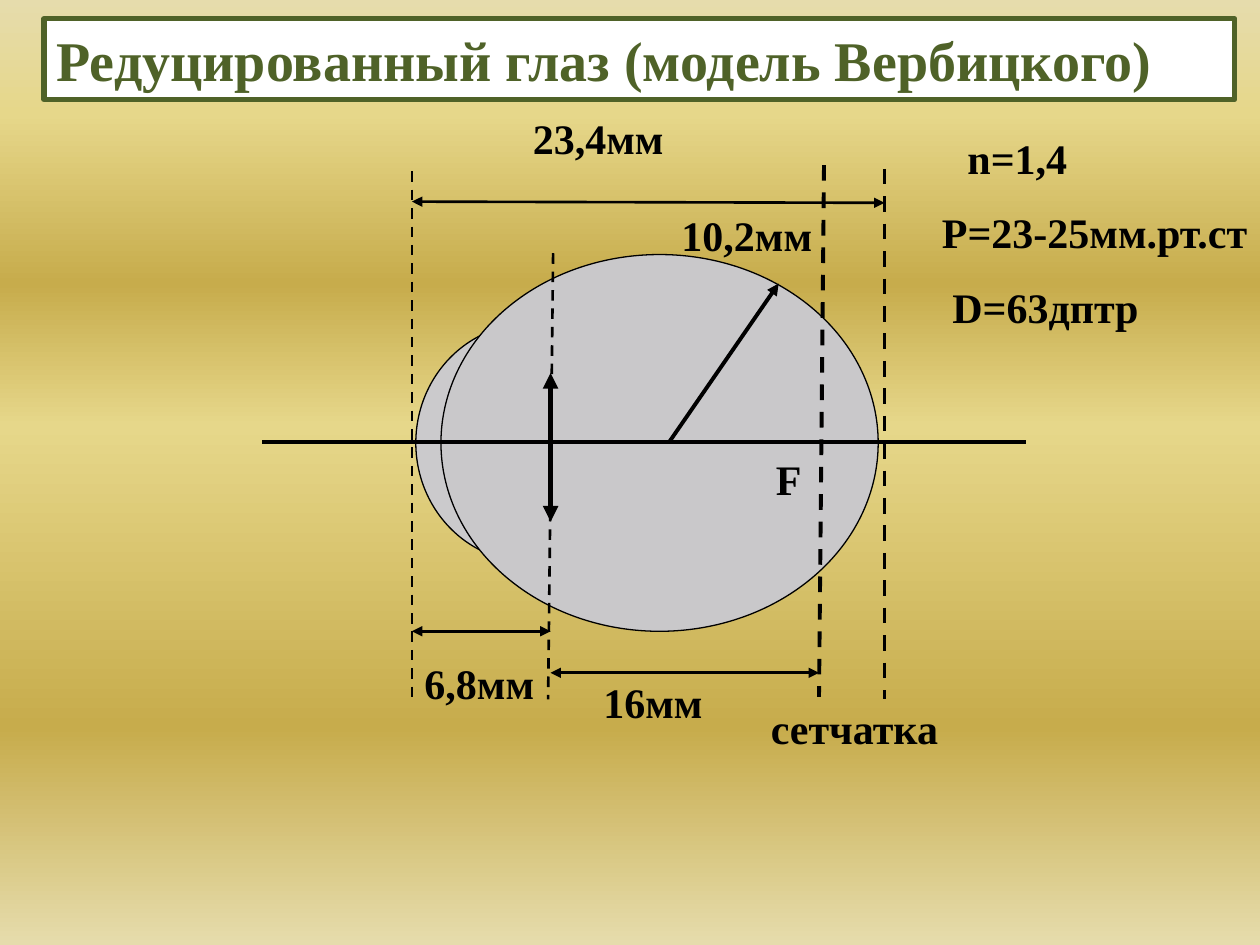
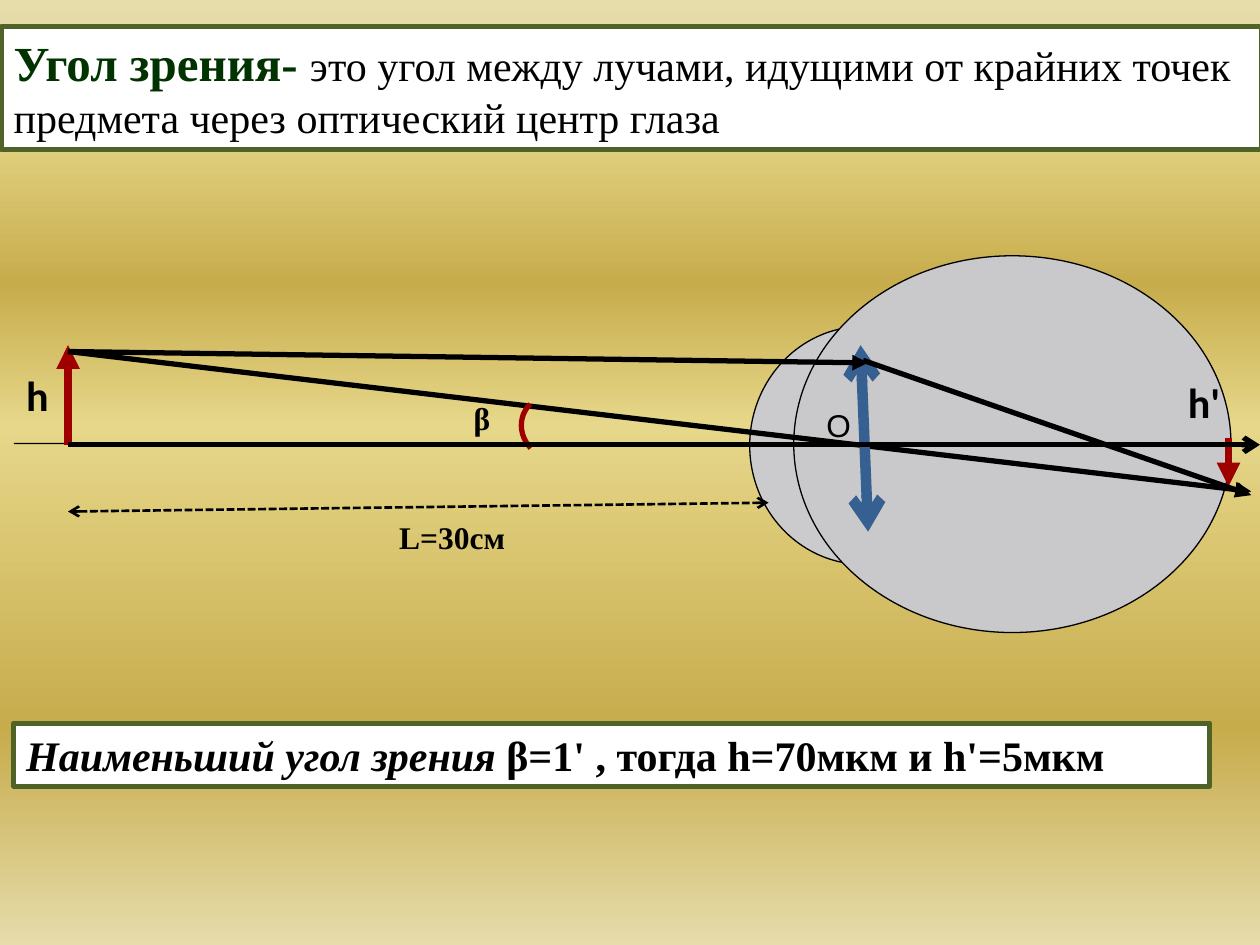
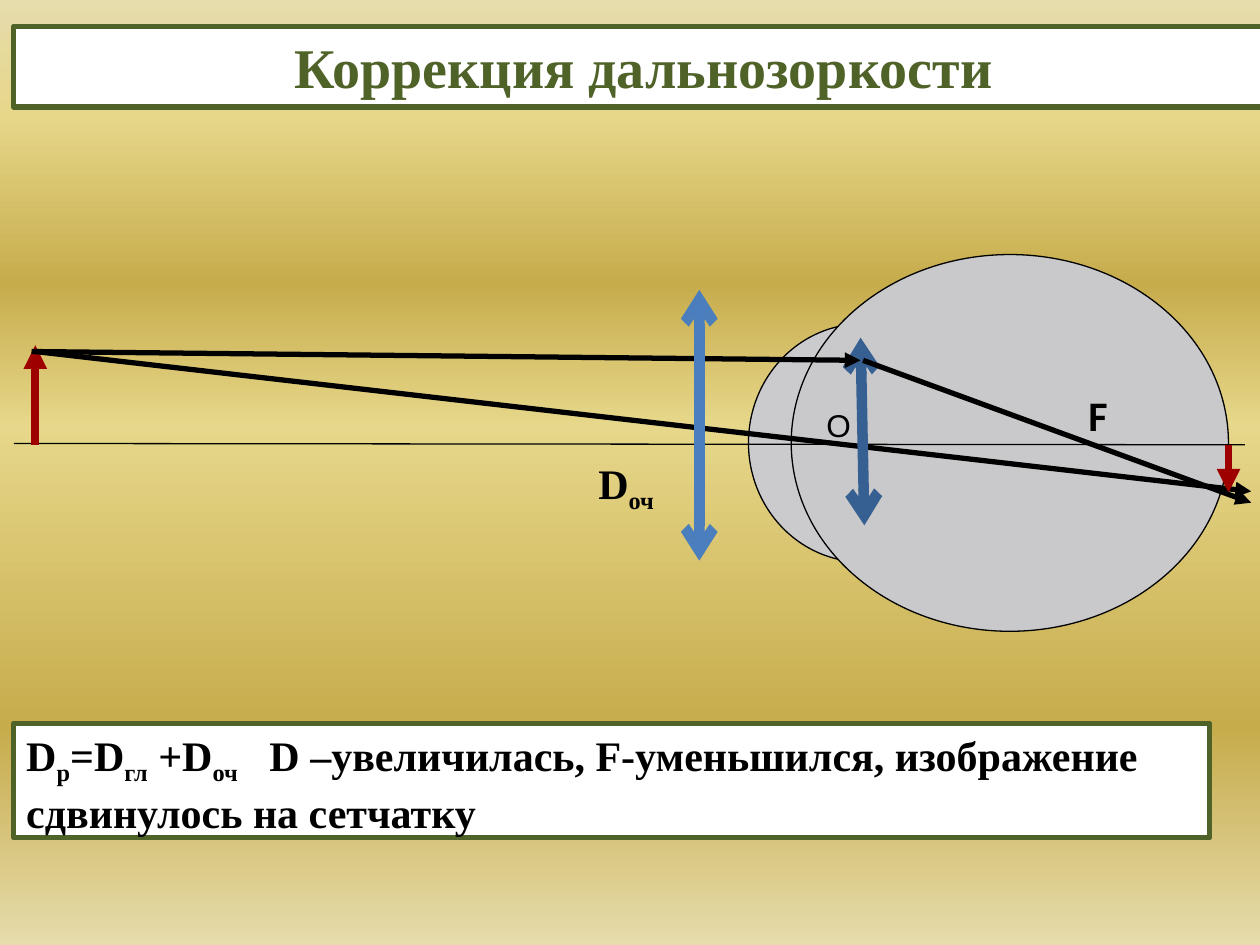
from itertools import cycle

from lxml.etree import SubElement
from pptx import Presentation
from pptx.dml.color import RGBColor
from pptx.enum.dml import MSO_LINE
from pptx.enum.shapes import MSO_CONNECTOR, MSO_SHAPE
from pptx.enum.text import MSO_ANCHOR, MSO_AUTO_SIZE, PP_ALIGN
from pptx.oxml import parse_xml
from pptx.oxml.ns import nsdecls, qn
from pptx.util import Inches, Pt

SLIDE_WIDTH, SLIDE_HEIGHT = Inches(10), Inches(7.5)
COLUMN, ROW = SLIDE_WIDTH / 100, SLIDE_HEIGHT / 75

BLACK = RGBColor(0x00, 0x00, 0x00)
WHITE = RGBColor(0xFF, 0xFF, 0xFF)
OLIVE = RGBColor(0x4F, 0x62, 0x28)
DARK_GREEN = RGBColor(0x00, 0x33, 0x00)
CORNEA_GREY = RGBColor(0xCB, 0xCA, 0xCC)
EYEBALL_GREY = RGBColor(0xC9, 0xC8, 0xCA)
DARK_RED = RGBColor(0x9E, 0x00, 0x00)
LENS_BLUE = RGBColor(0x37, 0x60, 0x92)
GLASSES_BLUE = RGBColor(0x4B, 0x7E, 0xBC)
PALE_GOLD = RGBColor(0xE6, 0xDC, 0xAC)
LIGHT_GOLD = RGBColor(0xE6, 0xD7, 0x8A)
DEEP_GOLD = RGBColor(0xC7, 0xAC, 0x4C)
BACKGROUND_STOPS = [(0, PALE_GOLD), (12, LIGHT_GOLD), (30, DEEP_GOLD),
                    (45, LIGHT_GOLD), (77, DEEP_GOLD), (100, PALE_GOLD)]

SERIF, SANS, LETTER = "Times New Roman", "Arial", "Calibri"


def grid_box(left, top, width, height):
    return (round(left * COLUMN), round(top * ROW),
            round(width * COLUMN), round(height * ROW))


def add_gold_slide(deck):
    slide = deck.slides.add_slide(deck.slide_layouts[6])
    stops = "".join(f'<a:gs pos="{share * 1000}"><a:srgbClr val="{color}"/></a:gs>'
                    for share, color in BACKGROUND_STOPS)
    background = parse_xml(
        f'<p:bg {nsdecls("p", "a")}><p:bgPr><a:gradFill rotWithShape="1">'
        f'<a:gsLst>{stops}</a:gsLst><a:lin ang="5400000" scaled="0"/>'
        '</a:gradFill><a:effectLst/></p:bgPr></p:bg>')
    slide.element.cSld.insert(0, background)
    return slide


def add_outlined(slide, kind, box, fill, color, weight):
    outlined = slide.shapes.add_shape(kind, *grid_box(*box))
    outlined.shadow.inherit = False
    if fill is None:
        outlined.fill.background()
    else:
        outlined.fill.solid()
        outlined.fill.fore_color.rgb = fill
    outlined.line.color.rgb = color
    outlined.line.width = Pt(weight)
    return outlined


def add_stroke(slide, start, end, weight, color=BLACK, head=None, tail=None, dash=None):
    (x1, y1), (x2, y2) = start, end
    stroke = slide.shapes.add_connector(
        MSO_CONNECTOR.STRAIGHT, round(x1 * COLUMN), round(y1 * ROW),
        round(x2 * COLUMN), round(y2 * ROW))
    stroke.line.color.rgb = color
    stroke.line.width = Pt(weight)
    if dash is not None:
        stroke.line.dash_style = dash
    outline = stroke.line._get_or_add_ln()
    for end_tag, arrowhead in (("a:headEnd", head), ("a:tailEnd", tail)):
        if arrowhead:
            SubElement(outline, qn(end_tag), type=arrowhead)
    SubElement(stroke._element.spPr, qn("a:effectLst"))


def style(font, size, name=SERIF, color=BLACK, bold=True):
    font.size = Pt(size)
    font.name = name
    font.color.rgb = color
    font.bold = bold


def prepare_text(holder, wrap=True):
    frame = holder.text_frame
    frame.word_wrap = wrap
    frame.auto_size = MSO_AUTO_SIZE.SHAPE_TO_FIT_TEXT
    frame.vertical_anchor = MSO_ANCHOR.TOP
    paragraph = frame.paragraphs[0]
    paragraph.alignment = PP_ALIGN.LEFT
    return paragraph


def add_band(slide, *box):
    return prepare_text(add_outlined(slide, MSO_SHAPE.RECTANGLE, box, WHITE, OLIVE, 3))


def add_title(slide, text, box, alignment=PP_ALIGN.LEFT):
    title = add_band(slide, *box)
    title.text = text
    title.alignment = alignment
    style(title.font, 32, color=OLIVE)


def add_label(slide, text, box, size=24, name=SERIF, bold=True, wrap=True):
    label = prepare_text(slide.shapes.add_textbox(*grid_box(*box)), wrap)
    label.text = text
    style(label.font, size, name, bold=bold)
    return label


def add_formula(paragraph, *pieces):
    style(paragraph.font, 24)
    for piece, baseline in zip(pieces, cycle((None, "-25000"))):
        run = paragraph.add_run()
        run.text = piece
        if baseline:
            run._r.get_or_add_rPr().set("baseline", baseline)


def add_eye(slide, cornea, eyeball):
    add_outlined(slide, MSO_SHAPE.OVAL, (*cornea, 18.1, 18.9), CORNEA_GREY, BLACK, 0.75)
    add_outlined(slide, MSO_SHAPE.OVAL, (*eyeball, 34.7, 29.9), EYEBALL_GREY, BLACK, 0.75)


def add_dimension(slide, start, end):
    add_stroke(slide, start, end, 1.5, head="triangle", tail="triangle")


def add_lens(slide, top, bottom, color=LENS_BLUE):
    add_stroke(slide, top, bottom, 6, color, head="arrow", tail="arrow")


def add_ray(slide, start, end):
    add_stroke(slide, start, end, 3, tail="triangle")


def add_ray_scene(slide, object_x, ray_x, image_top, lens, bend, ray_bottom):
    add_stroke(slide, (1.1, 35.2), (98.8, 35.3), 0.75)
    add_stroke(slide, (object_x, 35.3), (object_x, 27.4), 4.5, DARK_RED, tail="triangle")
    add_ray(slide, (object_x, 27.9), (99.3, 39))
    add_stroke(slide, (97.5, image_top), (97.5, image_top + 3.8), 4.5, DARK_RED,
               tail="triangle")
    add_label(slide, "О", (64.6, 31.7, 3.9, 4), 18, SANS, bold=False)
    add_lens(slide, *lens)
    add_ray(slide, (ray_x, 27.9), bend)
    add_ray(slide, (68.5, 28.6), (99.3, ray_bottom))


def build_reduced_eye(deck):
    slide = add_gold_slide(deck)
    cornea_x, lens_x, focus_x, retina_x, axis_y = 32.7, 43.7, 65, 70.2, 35.1
    add_eye(slide, (33, 25.7), (35, 20.2))
    add_stroke(slide, (20.8, axis_y), (81.4, axis_y), 2.25)
    add_title(slide, "Редуцированный глаз (модель Вербицкого)", (3.5, 1.5, 94.5, 6.4))
    for top, bottom, weight in [
            ((65.4, 13.1), (focus_x, 55.3), 2.25),
            ((43.9, 20.1), (43.5, 55.5), 1.5),
            ((cornea_x, 13.6), (cornea_x, 55.3), 1.5),
            ((retina_x, 13.4), (retina_x, 55.5), 2.25)]:
        add_stroke(slide, top, bottom, weight, dash=MSO_LINE.DASH)
    add_stroke(slide, (lens_x, 29.6), (lens_x, 41.4), 3, head="triangle", tail="triangle")
    add_stroke(slide, (53.1, axis_y), (61.8, 22.5), 2.25, tail="triangle")
    add_dimension(slide, (cornea_x, 50.1), (lens_x, 50.1))
    add_dimension(slide, (lens_x, 53.4), (focus_x, 53.4))
    add_dimension(slide, (cornea_x, 16), (retina_x, 16.1))
    for text, left, top, width in [
            ("F", 60.6, 35.5, 7.9), ("6,8мм", 32.7, 51.7, 16.5),
            ("16мм", 46.9, 53.2, 16.5), ("10,2мм", 53.1, 16.1, 15),
            ("23,4мм", 41.3, 8.4, 14.2)]:
        add_label(slide, text, (left, top, width, 5))
    add_label(slide, "сетчатка", (60.2, 55.3, 15.4, 5), wrap=False)

    first = add_label(slide, "n=1,4", (72.1, 10, 29.1, 17.2))
    first._p.get_or_add_pPr().set("marL", str(round(3.7 * COLUMN)))
    for text, indent in [("Р=23-25мм.рт.ст", 1.67), ("D=63дптр", 2.5)]:
        parameter = first._parent.add_paragraph()
        parameter.text = text
        parameter.space_before = Pt(13.8)
        parameter._p.get_or_add_pPr().set("marL", str(round(indent * COLUMN)))
        style(parameter.font, 24)


def build_visual_angle(deck):
    slide = add_gold_slide(deck)
    add_eye(slide, (59.5, 25.9), (63, 20.3))
    add_ray_scene(slide, 5.4, 5.4, 34.8, ((68.3, 27.4), (68.9, 42.2)), (68.9, 28.8), 39.3)
    add_label(slide, "β", (36.6, 31.2, 3.2, 4), 18)
    angle = add_outlined(slide, MSO_SHAPE.ARC, (41.3, 31.5, 5.1, 4.8), None, DARK_RED, 3)
    angle.rotation = 226
    add_label(slide, "h", (1.1, 28.8, 3.2, 5), name=LETTER)
    add_label(slide, "h'", (93.3, 29.4, 5.4, 5), name=LETTER)
    add_stroke(slide, (5.4, 40.6), (61, 39.9), 1.5, head="arrow", tail="arrow",
               dash=MSO_LINE.SQUARE_DOT)
    add_label(slide, "L=30cм", (30.7, 40.6, 15, 4), 18)
    add_stroke(slide, (5.4, 35.3), (100, 35.3), 3, tail="arrow")

    definition = add_band(slide, 0.1, 2.1, 100, 9.8)
    term = definition.add_run()
    term.text = "Угол зрения- "
    style(term.font, 28, color=DARK_GREEN)
    meaning = definition.add_run()
    meaning.text = ("это угол между лучами, идущими от крайних точек "
                    "предмета через оптический центр глаза")
    style(meaning.font, 24, bold=False)

    conclusion = add_band(slide, 1.1, 57.4, 94.9, 5)
    style(conclusion.font, 24)
    for text, italic in [("Наименьший угол зрения ", True),
                         ("β=1' , тогда h=70мкм и h'=5мкм", False)]:
        run = conclusion.add_run()
        run.text = text
        run.font.italic = italic


def build_farsight_correction(deck):
    slide = add_gold_slide(deck)
    add_eye(slide, (59.4, 25.7), (62.8, 20.2))
    add_ray_scene(slide, 2.8, 2.5, 35.3, ((68.3, 26.8), (68.6, 41.7)), (68.3, 28.6), 39.9)
    add_label(slide, "F", (85.4, 30.4, 3.9, 5), name=LETTER)
    glasses_label = prepare_text(slide.shapes.add_textbox(*grid_box(46.5, 35.8, 7.9, 8.1)))
    add_formula(glasses_label, "D", "оч")
    add_lens(slide, (55.5, 23), (55.5, 44.5), GLASSES_BLUE)
    add_title(slide, "Коррекция дальнозоркости", (1.1, 2.1, 100, 6.4), PP_ALIGN.CENTER)

    result = add_band(slide, 1.1, 57.4, 94.9, 9.1)
    tabs = parse_xml(f'<a:tabLst {nsdecls("a")}>'
                     f'<a:tab pos="{round(19.3 * COLUMN)}" algn="l"/></a:tabLst>')
    result._p.get_or_add_pPr().append(tabs)
    add_formula(result, "D", "р", "=D", "гл", " +D", "оч",
                "\tD –увеличилась, F-уменьшился, изображение сдвинулось на сетчатку")


def main():
    deck = Presentation()
    deck.slide_width, deck.slide_height = SLIDE_WIDTH, SLIDE_HEIGHT
    build_reduced_eye(deck)
    build_visual_angle(deck)
    build_farsight_correction(deck)
    deck.save("out.pptx")


if __name__ == "__main__":
    main()
